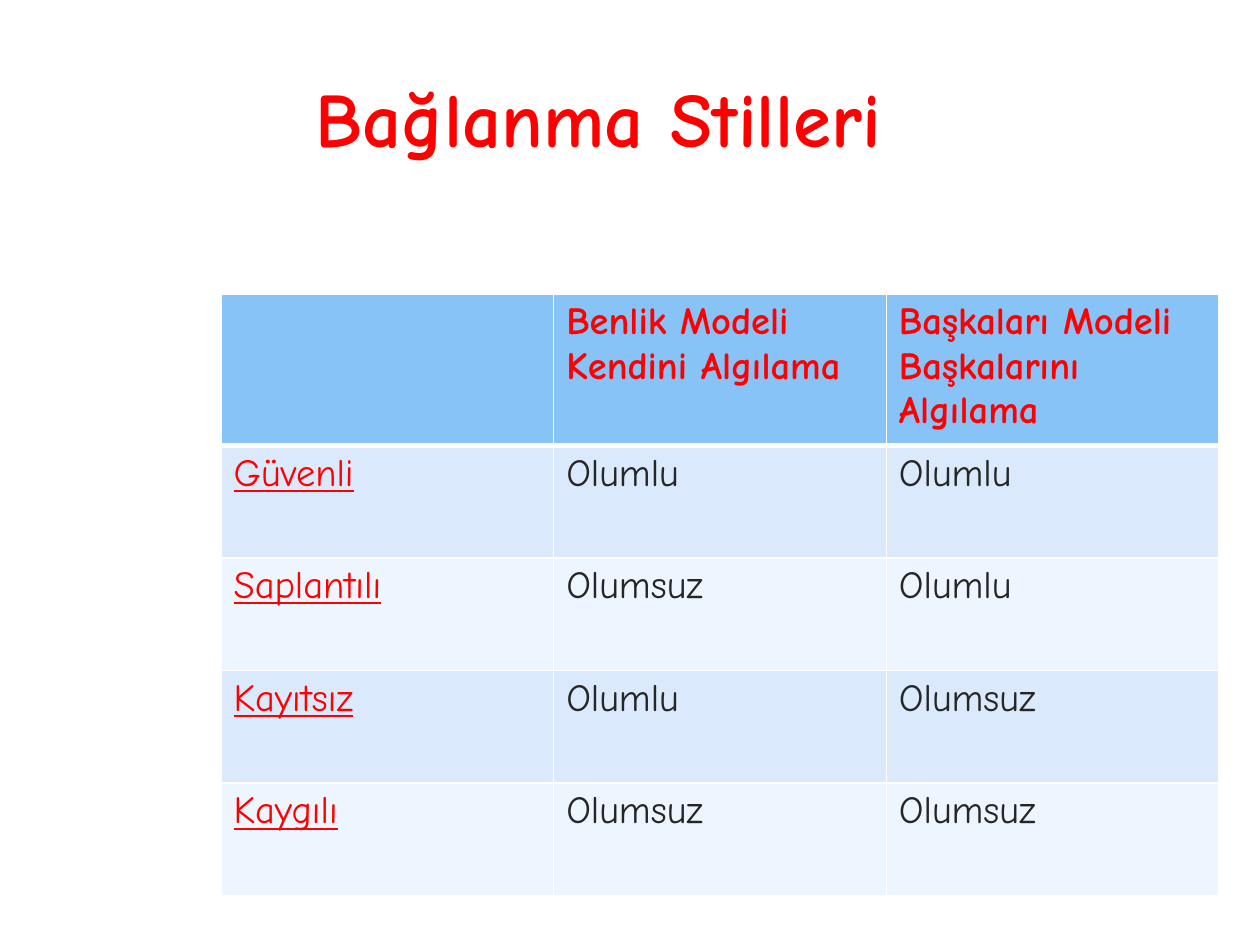
from dataclasses import dataclass

from lxml import etree
from pptx import Presentation
from pptx.dml.color import RGBColor
from pptx.enum.text import MSO_ANCHOR, PP_ALIGN
from pptx.oxml.ns import qn
from pptx.util import Pt

MIDDLE = MSO_ANCHOR.MIDDLE
CENTER = PP_ALIGN.CENTER
EMU_PER_PX = 914400 / 126
BLANK_LAYOUT = 6


@dataclass(frozen=True)
class Theme:
    """Colours, font and sizes of the slide."""
    font: str = "Comic Neue"
    white: str = "FFFFFF"
    accent: str = "FF0000"
    body: str = "262626"
    header_fill: str = "88C3F8"
    band_fills: tuple = ("DAE9FC", "EDF5FE")
    title_size: int = 44
    cell_size: int = 22
    title_opacity: int = 42
    thin_border: int = 1
    thick_border: int = 3


THEME = Theme()
TITLE_BOX = (0, 38, 1197, 158)
TABLE_BOX = (221, 294, 998, 563)
TABLE_ROWS = [
    ["", "Benlik Modeli\nKendini Algılama", "Başkaları Modeli\nBaşkalarını Algılama"],
    ["Güvenli", "Olumlu", "Olumlu"],
    ["Saplantılı", "Olumsuz", "Olumlu"],
    ["Kayıtsız", "Olumlu", "Olumsuz"],
    ["Kaygılı", "Olumsuz", "Olumsuz"],
]


def px(length):
    """Turn pixels into EMU."""
    return round(length * EMU_PER_PX)


def write_text(text_frame, text, color, size, **formats):
    """Write one formatted paragraph for each line of text."""
    text_frame.text = text
    formats = {"name": THEME.font, "size": Pt(size), **formats}
    for paragraph in text_frame.paragraphs:
        for name, value in formats.items():
            setattr(paragraph.font, name, value)
        paragraph.font.color.rgb = RGBColor.from_string(color)
        for run in paragraph.runs:
            for name, value in formats.items():
                setattr(run.font, name, value)
            run.font.color.rgb = RGBColor.from_string(color)


def set_fill(fill, color):
    """Give a shape or cell a solid fill."""
    fill.solid()
    fill.fore_color.rgb = RGBColor.from_string(color)


def set_borders(cell, top, bottom):
    """Draw white borders around a cell, with widths in points."""
    properties = cell._tc.get_or_add_tcPr()
    widths = {"a:lnL": THEME.thin_border, "a:lnR": THEME.thin_border,
              "a:lnT": top, "a:lnB": bottom}
    for tag, width in widths.items():
        line = etree.SubElement(properties, qn(tag), w=str(Pt(width)))
        solid = etree.SubElement(line, qn("a:solidFill"))
        etree.SubElement(solid, qn("a:srgbClr"), val=THEME.white)


def add_title(slide, box, text):
    """Place the centred title on a translucent white panel."""
    shape = slide.shapes.add_textbox(*map(px, box))
    set_fill(shape.fill, THEME.white)
    color = shape._element.spPr.find(qn("a:solidFill"))[0]
    etree.SubElement(color, qn("a:alpha"), val=str(THEME.title_opacity * 1000))
    text_frame = shape.text_frame
    text_frame.word_wrap = True
    text_frame.vertical_anchor = MIDDLE
    write_text(text_frame, text, THEME.accent, THEME.title_size, bold=True)
    text_frame.paragraphs[0].alignment = CENTER


def add_style_table(slide, box, rows):
    """Place the banded table of attachment styles with equal columns and rows."""
    left, top, width, height = map(px, box)
    table = slide.shapes.add_table(len(rows), len(rows[0]), left, top, width, height).table
    for row_index, row in enumerate(rows):
        is_header = row_index == 0
        fill = THEME.header_fill if is_header else THEME.band_fills[(row_index - 1) % 2]
        top_border = THEME.thick_border if row_index == 1 else THEME.thin_border
        bottom_border = THEME.thick_border if is_header else THEME.thin_border
        for column_index, text in enumerate(row):
            cell = table.cell(row_index, column_index)
            is_label = column_index == 0 and not is_header
            color = THEME.accent if is_header or is_label else THEME.body
            write_text(cell.text_frame, text, color, THEME.cell_size,
                       bold=is_header, underline=is_label)
            set_borders(cell, top_border, bottom_border)
            set_fill(cell.fill, fill)


def main():
    """Build the slide and save it."""
    presentation = Presentation()
    presentation.slide_width = px(1260)
    presentation.slide_height = px(945)
    slide = presentation.slides.add_slide(presentation.slide_layouts[BLANK_LAYOUT])
    add_title(slide, TITLE_BOX, "Bağlanma Stilleri")
    add_style_table(slide, TABLE_BOX, TABLE_ROWS)
    presentation.save("out.pptx")


if __name__ == "__main__":
    main()
